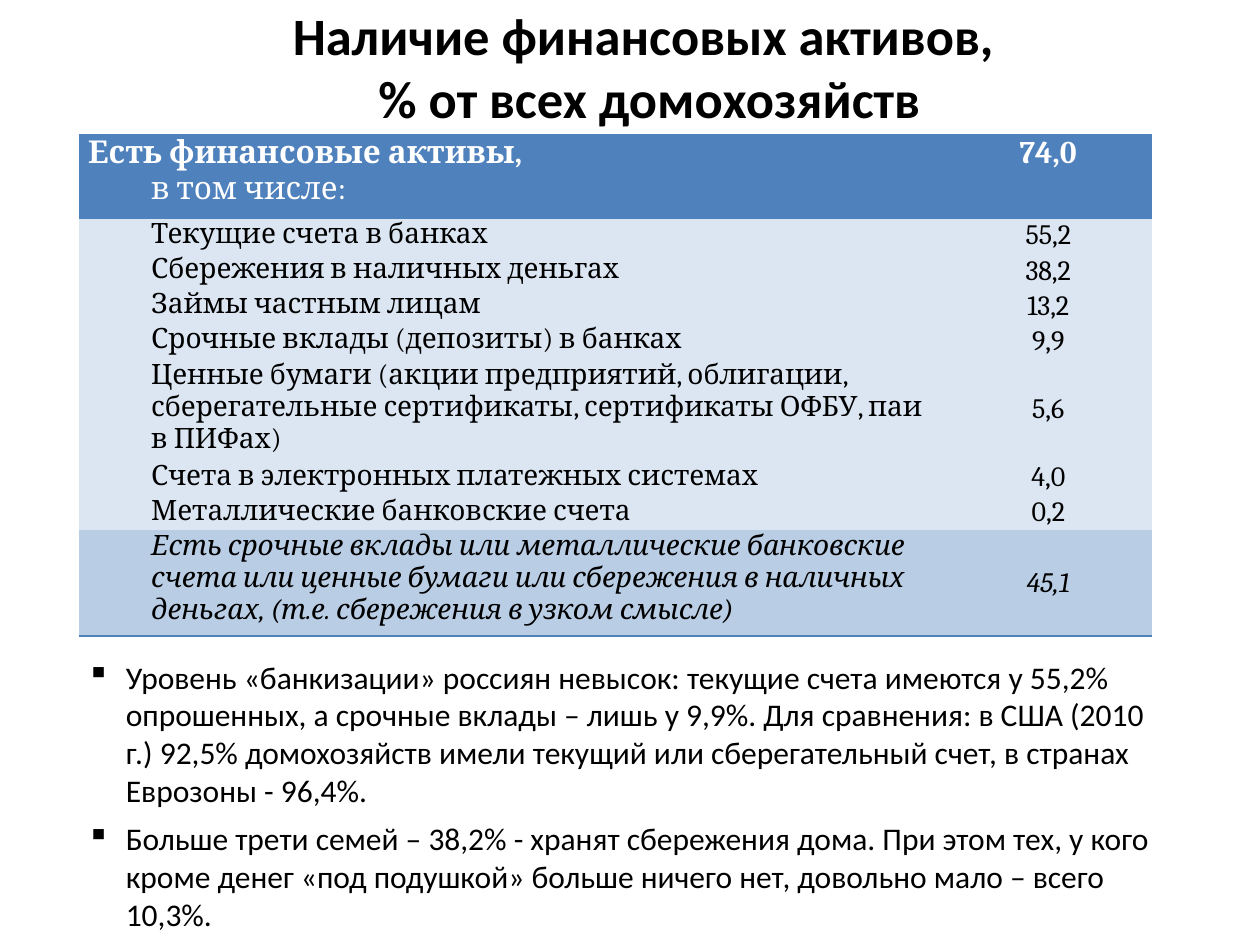
"""Build a slide on the financial assets held by households."""
from lxml.etree import SubElement
from pptx import Presentation
from pptx.dml.color import RGBColor
from pptx.enum.text import MSO_ANCHOR, PP_ALIGN
from pptx.oxml import parse_xml
from pptx.oxml.ns import nsdecls, qn
from pptx.util import Inches, Pt

BLACK = RGBColor(0x00, 0x00, 0x00)
WHITE = RGBColor(0xFF, 0xFF, 0xFF)
BLUE = RGBColor(0x4F, 0x81, 0xBD)
PALE = RGBColor(0xDC, 0xE6, 0xF2)
SOFT = RGBColor(0xB9, 0xCD, 0xE5)

TITLE = "Наличие финансовых активов, \v% от всех домохозяйств"
HEADER = ("Есть финансовые активы,", "в том числе:")
HEADER_VALUE = "74,0"
ASSETS = [
    ("Текущие счета в банках", "55,2"),
    ("Сбережения в наличных деньгах", "38,2"),
    ("Займы частным лицам", "13,2"),
    ("Срочные вклады (депозиты) в банках", "9,9"),
    ("Ценные бумаги (акции предприятий, облигации, сберегательные "
     "сертификаты, сертификаты ОФБУ, паи в ПИФах)", "5,6"),
    ("Счета в электронных платежных системах", "4,0"),
    ("Металлические банковские счета", "0,2"),
]
SUMMARY = ("Есть срочные вклады или металлические банковские счета или ценные "
           "бумаги или сбережения в наличных деньгах, (т.е. сбережения в узком "
           "смысле)", "45,1")
FINDINGS = [
    "Уровень «банкизации» россиян невысок: текущие счета имеются у 55,2% "
    "опрошенных, а срочные вклады – лишь у 9,9%. Для сравнения: в США (2010 г.) "
    "92,5% домохозяйств имели текущий или сберегательный счет, в странах "
    "Еврозоны - 96,4%.",
    "Больше трети семей – 38,2% - хранят сбережения дома. При этом тех, у кого "
    "кроме денег «под подушкой» больше ничего нет, довольно мало – всего 10,3%.",
]

COLUMNS = (6.87, 1.64)
HEADER_HEIGHT, LINE_HEIGHT, WRAPPED_HEIGHT, SUMMARY_HEIGHT = 0.66, 0.28, 0.76, 0.84
WRAP_LENGTH = 60
NO_STYLE = "{2D5ABB26-0587-4C30-8999-92F81FD0307C}"


def set_font(para, name, size, color, bold=False, italic=False):
    font = para.font
    font.name, font.size = name, Pt(size)
    font.bold, font.italic = bold, italic
    font.color.rgb = color


def set_indent(para, left, first=0):
    properties = para._p.get_or_add_pPr()
    properties.set("marL", str(Inches(left)))
    properties.set("indent", str(Inches(first)))
    return properties


def add_box(page, left, top, width, height):
    frame = page.shapes.add_textbox(*map(Inches, (left, top, width, height))).text_frame
    frame.word_wrap = True
    return frame


def add_border(cell, side):
    line = parse_xml(
        f'<a:{side} {nsdecls("a")} w="{Pt(1)}"><a:solidFill>'
        f'<a:srgbClr val="{BLUE}"/></a:solidFill></a:{side}>')
    properties = cell._tc.get_or_add_tcPr()
    properties.insert(len(properties.findall(qn("a:lnT"))), line)


def fill_cell(cell, lines, fill, borders):
    cell.margin_left = cell.margin_right = Inches(0.07)
    cell.margin_top = cell.margin_bottom = 0
    cell.fill.solid()
    cell.fill.fore_color.rgb = fill
    for side in borders:
        add_border(cell, side)
    cell.text_frame.text = "\n".join(lines)
    return cell.text_frame.paragraphs


def add_table(page):
    rows = [(HEADER, HEADER_VALUE, HEADER_HEIGHT, BLUE, ("lnT", "lnB"))]
    for label, value in ASSETS:
        height = WRAPPED_HEIGHT if len(label) > WRAP_LENGTH else LINE_HEIGHT
        rows.append(((label,), value, height, PALE, ()))
    rows.append((SUMMARY[:1], SUMMARY[1], SUMMARY_HEIGHT, SOFT, ("lnB",)))

    total = sum(row[2] for row in rows)
    table = page.shapes.add_table(
        len(rows), len(COLUMNS), Inches(0.63), Inches(1.07),
        Inches(sum(COLUMNS)), Inches(total)).table
    table._tbl.tblPr.find(qn("a:tableStyleId")).text = NO_STYLE
    for column, width in zip(table.columns, COLUMNS):
        column.width = Inches(width)

    for index, (labels, value, height, fill, borders) in enumerate(rows):
        table.rows[index].height = Inches(height)
        header, summary = index == 0, index == len(rows) - 1
        size, color = (18, WHITE) if header else (16, BLACK)
        label_cell, value_cell = table.cell(index, 0), table.cell(index, 1)
        for position, para in enumerate(fill_cell(label_cell, labels, fill, borders)):
            heading = header and position == 0
            set_font(para, "Cambria", size, color, heading, summary)
            if not heading:
                para.level = 1
                set_indent(para, 0.5)
        para = fill_cell(value_cell, (value,), fill, borders)[0]
        para.alignment = PP_ALIGN.CENTER
        set_font(para, "Cambria", size, color, header, summary)
        if header:
            para.space_before = Pt(12)
        else:
            value_cell.vertical_anchor = MSO_ANCHOR.MIDDLE


def add_findings(page):
    frame = add_box(page, 0.59, 5.17, 8.81, 2.31)
    frame.text = "\n".join(FINDINGS)
    for index, para in enumerate(frame.paragraphs):
        set_font(para, "Calibri", 18, BLACK)
        para.space_before = Pt(6 if index else 0)
        properties = set_indent(para, 0.31, -0.31)
        bullet = SubElement(properties, qn("a:buChar"), char="▪")
        properties.find(qn("a:defRPr")).addprevious(bullet)


def main():
    deck = Presentation()
    deck.slide_width, deck.slide_height = Inches(10), Inches(7.5)
    page = deck.slides.add_slide(deck.slide_layouts[6])
    title = add_box(page, 0.51, 0.21, 9.29, 0.63)
    title.vertical_anchor = MSO_ANCHOR.MIDDLE
    title.text = TITLE
    para = title.paragraphs[0]
    para.alignment = PP_ALIGN.CENTER
    set_font(para, "Calibri", 30, BLACK, bold=True)
    add_table(page)
    add_findings(page)
    deck.save("out.pptx")


if __name__ == "__main__":
    main()
